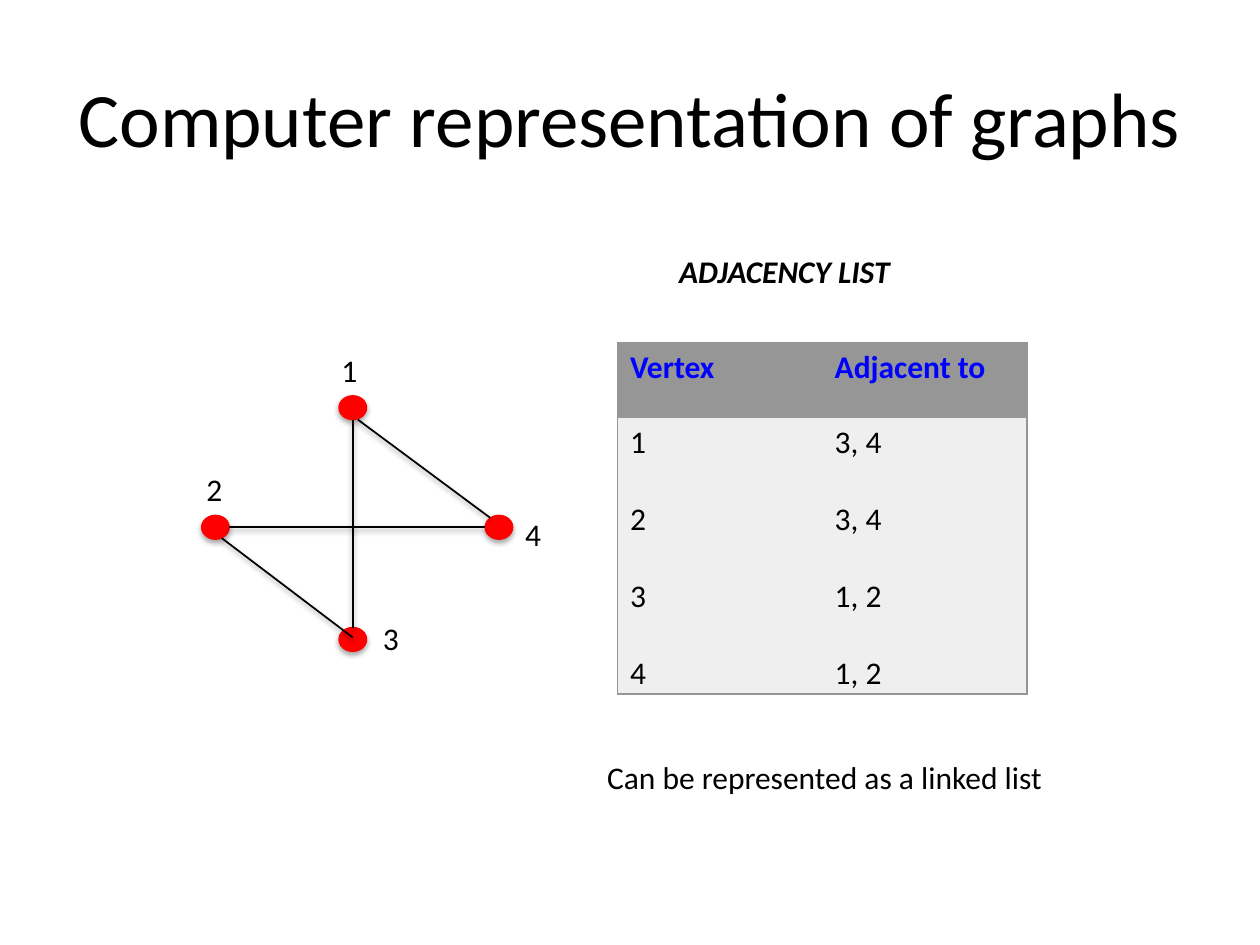
import dataclasses

import lxml.etree
import pptx
import pptx.dml.color
import pptx.enum.shapes
import pptx.enum.text
import pptx.oxml
import pptx.oxml.ns
import pptx.util

Pt = pptx.util.Pt
Align = pptx.enum.text.PP_ALIGN
Anchor = pptx.enum.text.MSO_ANCHOR
qn = pptx.oxml.ns.qn


@dataclasses.dataclass
class Theme:
    font: str = "Calibri"
    title: int = 44
    body: int = 18
    ink: str = "000000"
    node: str = "FF0000"
    head: str = "0000FF"
    rule: str = "969696"
    pale: str = "EFEFEF"


def rgb(code):
    return pptx.dml.color.RGBColor.from_string(code)


def shade(shape, dist, alpha):
    """Give a shape a soft shadow that falls straight down."""
    props = shape._element.spPr
    for old in props.findall(qn("a:effectLst")):
        props.remove(old)
    effects = lxml.etree.SubElement(props, qn("a:effectLst"))
    drop = lxml.etree.SubElement(
        effects, qn("a:outerShdw"), blurRad=str(Pt(3.1)), dist=str(Pt(dist)),
        dir="5400000", rotWithShape="0")
    tone = lxml.etree.SubElement(drop, qn("a:srgbClr"), val="000000")
    lxml.etree.SubElement(tone, qn("a:alpha"), val=str(alpha * 1000))


class Board:
    def __init__(self, slide, theme):
        self.shapes = slide.shapes
        self.theme = theme

    def style(self, para, size=None, color=None, bold=False, italic=False):
        font = para.font
        font.name = self.theme.font
        font.size = Pt(size or self.theme.body)
        font.color.rgb = rgb(color or self.theme.ink)
        font.bold, font.italic = bold, italic

    def text(self, words, x, y, w, h=29, wrap=False, **look):
        frame = self.shapes.add_textbox(Pt(x), Pt(y), Pt(w), Pt(h)).text_frame
        frame.word_wrap = wrap
        para = frame.paragraphs[0]
        para.text = words
        self.style(para, **look)
        return frame

    def title(self, words, *box):
        frame = self.text(words, *box, wrap=True, size=self.theme.title)
        frame.vertical_anchor = Anchor.MIDDLE
        frame.paragraphs[0].alignment = Align.CENTER

    def node(self, x, y, w=15.8, h=13.7):
        """Draw a vertex centred on x, y."""
        dot = self.shapes.add_shape(
            pptx.enum.shapes.MSO_SHAPE.OVAL,
            Pt(x - w / 2), Pt(y - h / 2), Pt(w), Pt(h))
        dot.fill.solid()
        dot.fill.fore_color.rgb = rgb(self.theme.node)
        dot.line.color.rgb = rgb(self.theme.node)
        dot.line.width = Pt(0.75)
        shade(dot, 1.8, 35)

    def edge(self, start, end):
        line = self.shapes.add_connector(
            pptx.enum.shapes.MSO_CONNECTOR.STRAIGHT,
            *(Pt(v) for v in (*start, *end)))
        line.line.color.rgb = rgb(self.theme.ink)
        line.line.width = Pt(1)
        shade(line, 1.6, 38)

    def border(self, cell, sides):
        """Rule the named sides of a cell and clear the others."""
        props = cell._tc.get_or_add_tcPr()
        for side in "LRTB":
            line = lxml.etree.SubElement(
                props, qn("a:ln" + side), w=str(Pt(1)))
            if side in sides:
                fill = lxml.etree.SubElement(line, qn("a:solidFill"))
                lxml.etree.SubElement(
                    fill, qn("a:srgbClr"), val=self.theme.rule)
            else:
                lxml.etree.SubElement(line, qn("a:noFill"))

    def table(self, rows, x, y, width, heights):
        grid = self.shapes.add_table(
            len(rows), len(rows[0]), Pt(x), Pt(y),
            Pt(width * len(rows[0])), Pt(sum(heights))).table
        for col in grid.columns:
            col.width = Pt(width)
        for r, row in enumerate(rows):
            grid.rows[r].height = Pt(heights[r])
            for c, lines in enumerate(row):
                self.cell(grid.cell(r, c), lines, r == 0, "LR"[c] + "TB")

    def cell(self, cell, lines, head, sides):
        theme = self.theme
        self.border(cell, sides)
        cell.fill.solid()
        cell.fill.fore_color.rgb = rgb(theme.rule if head else theme.pale)
        cell.margin_bottom = 0
        cell.text_frame.text = "\n".join(lines)
        for i, para in enumerate(cell.text_frame.paragraphs):
            self.style(para, color=theme.head if head else theme.ink, bold=head)
            if i:
                para.space_before = Pt(22)


def main():
    deck = pptx.Presentation()
    deck.slide_width, deck.slide_height = Pt(720), Pt(540)
    board = Board(deck.slides.add_slide(deck.slide_layouts[6]), Theme())

    board.title("Computer representation of graphs", 36, 21.6, 648, 90)
    board.text("ADJACENCY LIST", 381, 140.4, 140.4, bold=True, italic=True)

    nodes = {1: (201.6, 233), 4: (285.1, 301.3),
             3: (201.6, 365.4), 2: (123.1, 301.3)}
    for spot in nodes.values():
        board.node(*spot)

    # Each edge: vertex and offset from its centre, at both ends
    edges = [(1, (0, 6.8), 3, (0, -6.8)),
             (2, (7.9, 0), 4, (-7.9, 0)),
             (1, (2.9, 6.8), 4, (-5, -5.4)),
             (2, (3.6, 6.2), 3, (0, -1.1))]
    for a, da, b, db in edges:
        board.edge((nodes[a][0] + da[0], nodes[a][1] + da[1]),
                   (nodes[b][0] + db[0], nodes[b][1] + db[1]))

    labels = {1: (188, 197.3), 2: (110.9, 265),
              3: (211.7, 350), 4: (293, 290.9)}
    for name, spot in labels.items():
        board.text(str(name), *spot, 23.8)

    links = {"1": "3, 4", "2": "3, 4", "3": "1, 2", "4": "1, 2"}
    board.table([(["Vertex"], ["Adjacent to"]),
                 (list(links), list(links.values()))],
                352.8, 195.8, 117, (42.8, 158))
    board.text("Can be represented as a linked list", 339.8, 429.8, 265.7)

    deck.save("out.pptx")


if __name__ == "__main__":
    main()
